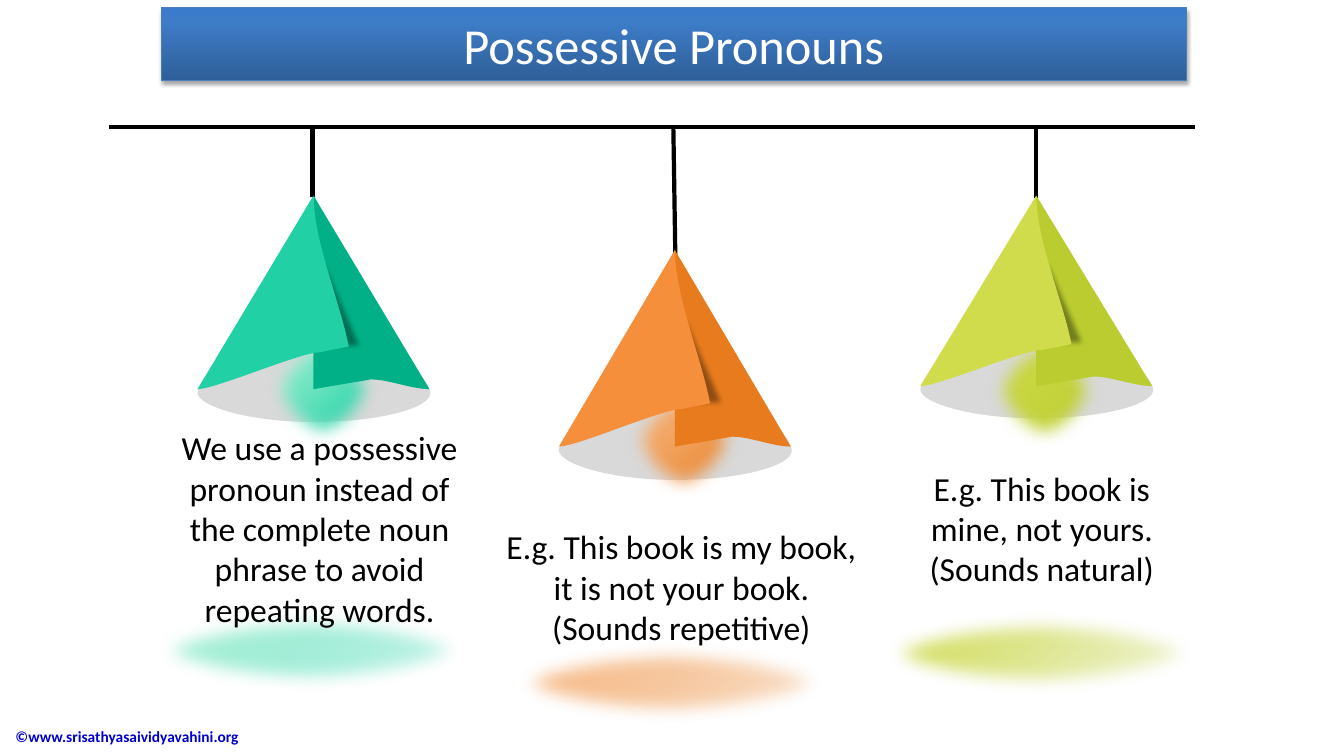
from lxml import etree
from pptx import Presentation
from pptx import util as u
from pptx.dml.color import RGBColor
from pptx.enum import shapes, text
from pptx.oxml import ns

CELL = u.Inches(0.1)
COLS, ROWS = 133.33, 75
BAR = 12.63
FONT = "Calibri"
HUES = {
    "black": "000000", "white": "FFFFFF", "blue": "0000CC",
    "edge": "4B7EBC", "disc": "D9D9D9",
}
BANNER = [(0, "2F5F99"), (80, "3D7CC7"), (100, "3A7CCB")]
TONES = {
    "mint": {"dark": "01B086", "lite": "22D0A6",
             "glow": [(0, "00CC9B"), (95, "BAF5DB"), (100, "DEF9ED")]},
    "peach": {"dark": "E77B1D", "lite": "F58F3C",
              "glow": [(0, "E77B1D"), (95, "FAC090")]},
    "lime": {"dark": "BACC2F", "lite": "D1DC4C",
             "glow": [(0, "BACC2F"), (100, "D1DC4C")]},
}
DISC = [[(-11.5, 1.02)],
        [(-11.5, 0.93), (-6.6, 0.69), (-0.3, 0.69)],
        [(6.1, 0.69), (11.6, 0.93), (11.6, 1.02)],
        [(11.6, 1.1), (6.4, 1.17), (0, 1.17)],
        [(-6.3, 1.17), (-11.4, 1.09), (-11.5, 1.02)]]
BACK = [[(0, 1)], [(0, 0)], [(11.5, 1)],
        [(9.7, 1), (7.5, 0.95), (5.7, 0.95)], [(0, 1)]]
FRONT = [[(3.5, 0.78)],
         [(2.6, 0.54), (0.1, 0.25), (0, 0)], [(-11.5, 1)],
         [(-9.7, 1), (-1.3, 0.81), (0.6, 0.81)], [(3.5, 0.78)]]
LAMPS = [
    {"tone": "mint", "mid": 31.1, "top": 19.4, "tall": 19.2, "bulb": 32.5,
     "cord": (31, 31), "end": 19.5, "pool": (13.9, 60.3),
     "box": (16.8, 41.9, 29.8, 21.2),
     "say": "We use a possessive pronoun instead of the complete noun "
            "phrase to avoid repeating words."},
    {"tone": "peach", "mid": 66.95, "top": 24.8, "tall": 19.5, "bulb": 37.7,
     "cord": (66.8, 67), "end": 25.7, "pool": (49.7, 63.5),
     "box": (48.8, 51.7, 37.6, 12.9),
     "say": "E.g. This book is my book, it is not your book. (Sounds repetitive)"},
    {"tone": "lime", "mid": 102.8, "top": 19.4, "tall": 18.9, "bulb": 32.7,
     "cord": (102.75, 102.75), "end": 19.6, "pool": (86.4, 60.6),
     "box": (90.45, 45.9, 25.8, 13.1),
     "say": "E.g. This book is mine, not yours. (Sounds natural)"},
]


def grid(*cells):
    return [int(c * CELL) for c in cells]


def paint(shape, hue):
    shape.fill.solid()
    shape.fill.fore_color.rgb = RGBColor.from_string(hue)
    shape.line.fill.background()
    shape.shadow.inherit = False


def node(host, tag, **attrs):
    return etree.SubElement(host, ns.qn("a:" + tag),
                            {k: str(v) for k, v in attrs.items()})


def blend(shape, stops, angle=None, clear=None):
    shape.fill.background()
    props = shape._element.spPr
    old = props.find(ns.qn("a:noFill"))
    grad = etree.Element(ns.qn("a:gradFill"), rotWithShape="1")
    row = node(grad, "gsLst")
    for pos, hue in stops:
        tint = node(node(row, "gs", pos=pos * 1000), "srgbClr", val=hue)
        if clear and pos == 0:
            node(tint, "alpha", val=clear * 1000)
    if angle is None:
        way = node(grad, "path", path="circle")
        node(way, "fillToRect", l=100000, t=100000)
    else:
        node(grad, "lin", ang=angle * 60000, scaled=0)
    props.replace(old, grad)


def effect(shape, tag, **attrs):
    shape.shadow.inherit = False
    return node(shape._element.spPr.find(ns.qn("a:effectLst")), tag, **attrs)


def soften(shape, points):
    effect(shape, "softEdge", rad=u.Pt(points))


def bend(shape, steps):
    legs = list(shape._element.spPr.iter(ns.qn("a:lnTo")))
    for step in steps[1:]:
        part, legs = legs[:len(step)], legs[len(step):]
        if len(step) == 3:
            curve = etree.Element(ns.qn("a:cubicBezTo"))
            part[0].addprevious(curve)
            for leg in part:
                curve.append(leg[0])
                leg.getparent().remove(leg)


def panel(host, steps, lamp, hue):
    dots = [grid(lamp["mid"] + x, lamp["top"] + y * lamp["tall"])
            for step in steps for x, y in step]
    pen = host.build_freeform(*dots[0], scale=1.0)
    pen.add_line_segments(dots[1:], close=True)
    shape = pen.convert_to_shape()
    bend(shape, steps)
    paint(shape, hue)


def wire(host, *ends):
    line = host.add_connector(shapes.MSO_CONNECTOR.STRAIGHT, *grid(*ends))
    line.line.color.rgb = RGBColor.from_string(HUES["black"])
    line.line.width = u.Pt(3)
    node(line._element.spPr, "effectLst")


def glow(host, stops, clear, *place):
    oval = host.add_shape(shapes.MSO_SHAPE.OVAL, *grid(*place))
    oval.line.fill.background()
    blend(oval, stops, clear=clear)
    soften(oval, 12.5)


def shade(host, lamp, tone):
    group = host.add_group_shape().shapes
    panel(group, BACK, lamp, tone["dark"])
    dusk = group.add_shape(shapes.MSO_SHAPE.RIGHT_TRIANGLE, *grid(
        lamp["mid"] + 0.6, lamp["top"] + 0.2 * lamp["tall"],
        4.9, 0.6 * lamp["tall"]))
    paint(dusk, HUES["black"])
    tint = dusk._element.spPr.find(ns.qn("a:solidFill"))[0]
    node(tint, "alpha", val=38000)
    soften(dusk, 4)
    panel(group, FRONT, lamp, tone["lite"])


def style(frame, words, size, hue, align, bold=False):
    frame.text = words
    frame.word_wrap = True
    par = frame.paragraphs[0]
    par.alignment = align
    font = par.runs[0].font
    font.name, font.size, font.bold = FONT, u.Pt(size), bold
    font.color.rgb = RGBColor.from_string(HUES[hue])


def label(host, words, place, size, hue, align, bold=False):
    frame = host.add_textbox(*grid(*place)).text_frame
    style(frame, words, size, hue, align, bold)
    return frame


def banner(title):
    title.left, title.top, title.width, title.height = grid(16, 0.75, 101.7, 7.2)
    blend(title, BANNER, angle=270)
    title.line.color.rgb = RGBColor.from_string(HUES["edge"])
    title.line.width = u.Pt(0.75)
    cast = effect(title, "outerShdw", blurRad=u.Pt(3.1), dist=u.Pt(1.8),
                  dir=5400000, rotWithShape=0)
    node(node(cast, "srgbClr", val=HUES["black"]), "alpha", val=35000)
    frame = title.text_frame
    style(frame, "Possessive Pronouns", 36, "white", text.PP_ALIGN.CENTER)
    frame.vertical_anchor = text.MSO_ANCHOR.MIDDLE
    frame.auto_size = text.MSO_AUTO_SIZE.NONE


def main():
    deck = Presentation()
    deck.slide_width, deck.slide_height = grid(COLS, ROWS)
    slide = deck.slides.add_slide(deck.slide_layouts[5])
    host = slide.shapes
    banner(host.title)
    foot = label(host, "©www.srisathyasaividyavahini.org", (0.55, 71, 35, 4.1),
                 11, "blue", text.PP_ALIGN.LEFT, True)
    foot.vertical_anchor = text.MSO_ANCHOR.MIDDLE
    for lamp in LAMPS:
        tone = TONES[lamp["tone"]]
        start, stop = lamp["cord"]
        wire(host, start, BAR, stop, lamp["end"])
        panel(host, DISC, lamp, HUES["disc"])
        glow(host, tone["glow"], None, lamp["mid"] - 5.2, lamp["bulb"], 12.1, 12.1)
        shade(host, lamp, tone)
        glow(host, tone["glow"], 10, *lamp["pool"], 33.9, 8.4)
        frame = label(host, lamp["say"], lamp["box"], 24, "black",
                      text.PP_ALIGN.CENTER)
        frame.auto_size = text.MSO_AUTO_SIZE.SHAPE_TO_FIT_TEXT
    wire(host, 10.8, BAR, 118.6, BAR)
    deck.save("out.pptx")


if __name__ == "__main__":
    main()
